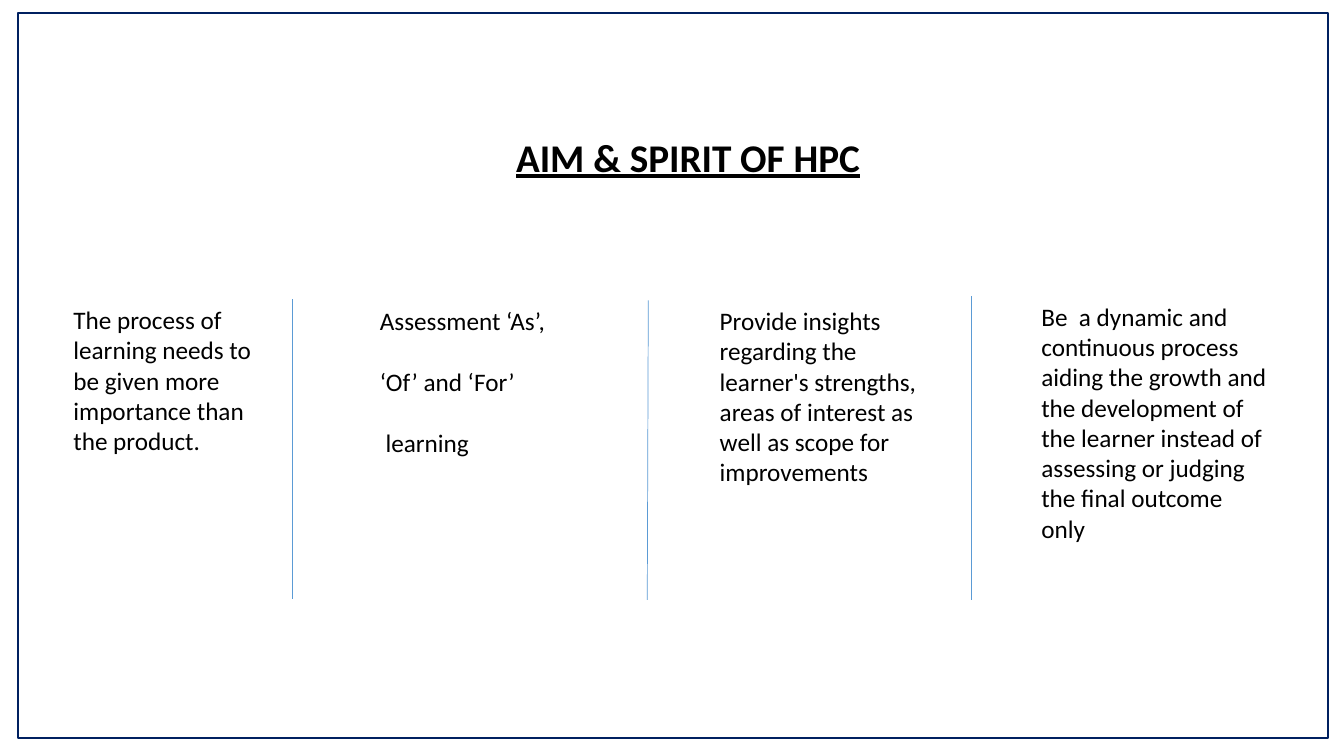
from dataclasses import dataclass

from lxml import etree
from pptx import Presentation
from pptx.dml.color import RGBColor
from pptx.enum.shapes import MSO_CONNECTOR, MSO_SHAPE
from pptx.enum.text import MSO_AUTO_SIZE, PP_ALIGN
from pptx.oxml.ns import qn
from pptx.util import Emu, Pt

STRAIGHT = MSO_CONNECTOR.STRAIGHT
RECTANGLE = MSO_SHAPE.RECTANGLE
GROW = MSO_AUTO_SIZE.SHAPE_TO_FIT_TEXT
LEFT = PP_ALIGN.LEFT
JUSTIFY = PP_ALIGN.JUSTIFY
EMU_PER_PX = 9144


@dataclass(frozen=True)
class Theme:
    """Holds the colours, font and sizes of the slide."""
    font: str = "Calibri"
    ink: RGBColor = RGBColor(0x00, 0x00, 0x00)
    frame: RGBColor = RGBColor(0x00, 0x20, 0x60)
    divider: RGBColor = RGBColor(0x5B, 0x9B, 0xD5)
    title_size: int = 28
    body_size: int = 18
    paragraph_gap: int = 22
    frame_width: float = 1
    divider_width: float = 0.5


THEME = Theme()
SLIDE_SIZE = (1333, 750)
TITLE_BOX = (502, 127, 365, 57)
FRAME_BOX = (18, 13, 1299, 719)
AIMS = [
    ((63, 297, 224, 162), [
        "The process of learning needs to be given more importance than the product."]),
    ((367, 298, 200, 162), ["Assessment ‘As’,", "‘Of’ and ‘For’", " learning"]),
    ((704, 298, 243, 192), [
        "Provide insights regarding the learner's strengths, areas of interest "
        "as well as scope for improvements"]),
    ((1023, 294, 247, 283), [
        "Be  a dynamic and continuous process aiding the growth and the development "
        "of the learner instead of assessing or judging the final outcome only"]),
]
DIVIDERS = [(290, 297, 290, 594), (643, 298, 642, 595), (963, 294, 963, 595)]


def px(*lengths):
    """Turn whole pixels into EMU."""
    return [Emu(length * EMU_PER_PX) for length in lengths]


def add_text(slide, box, lines, size, wrap=True, heading=False):
    """Add a text box with one paragraph for each line."""
    frame = slide.shapes.add_textbox(*px(*box)).text_frame
    frame.word_wrap = wrap
    frame.auto_size = GROW
    for index, line in enumerate(lines):
        paragraph = frame.paragraphs[0] if index == 0 else frame.add_paragraph()
        paragraph.alignment = JUSTIFY if heading else LEFT
        if index:
            paragraph.space_before = Pt(THEME.paragraph_gap)
        run = paragraph.add_run()
        run.text = line
        run.font.name = THEME.font
        run.font.size = Pt(size)
        run.font.color.rgb = THEME.ink
        run.font.bold = heading
        run.font.underline = heading


def add_title(slide, box):
    """Add the underlined heading."""
    add_text(slide, box, ["AIM & SPIRIT OF HPC"], THEME.title_size, wrap=False, heading=True)


def add_frame(slide, box):
    """Add the outline around the slide."""
    shape = slide.shapes.add_shape(RECTANGLE, *px(*box))
    shape.shadow.inherit = False
    shape.fill.background()
    shape.line.color.rgb = THEME.frame
    shape.line.width = Pt(THEME.frame_width)


def add_divider(slide, ends):
    """Add a thin line between two columns."""
    connector = slide.shapes.add_connector(STRAIGHT, *px(*ends))
    connector.line.color.rgb = THEME.divider
    connector.line.width = Pt(THEME.divider_width)
    etree.SubElement(connector._element.spPr, qn("a:effectLst"))


def main():
    """Build and save the slide."""
    presentation = Presentation()
    presentation.slide_width, presentation.slide_height = px(*SLIDE_SIZE)
    slide = presentation.slides.add_slide(presentation.slide_layouts[6])
    add_title(slide, TITLE_BOX)
    add_frame(slide, FRAME_BOX)
    for box, lines in AIMS:
        add_text(slide, box, lines, THEME.body_size)
    for ends in DIVIDERS:
        add_divider(slide, ends)
    presentation.save("out.pptx")


if __name__ == "__main__":
    main()
